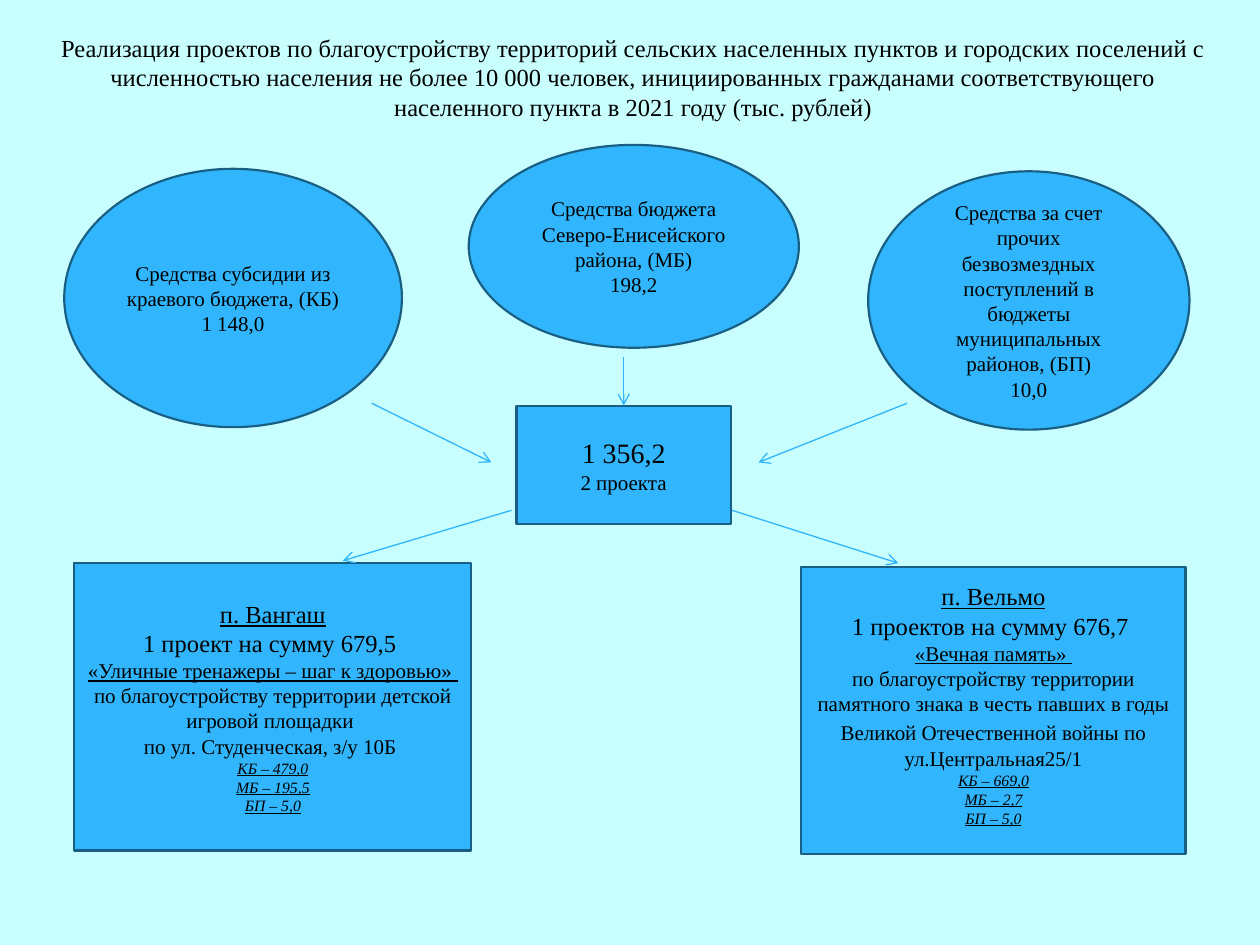
from dataclasses import dataclass
from typing import NamedTuple

from lxml import etree
from pptx import Presentation, util as u
from pptx.dml.color import RGBColor
from pptx.enum import shapes, text
from pptx.oxml import ns

COLORS = {"background": "C8FEFD", "fill": "31B6FD", "outline": "195F84", "text": "000000"}
FONT = "Times New Roman"
COLUMNS, ROWS = 100, 75
OVAL, RECTANGLE = shapes.MSO_SHAPE.OVAL, shapes.MSO_SHAPE.RECTANGLE

presentation = Presentation()
presentation.slide_width, presentation.slide_height = u.Inches(10), u.Inches(7.5)


class Run(NamedTuple):
    text: str
    size: float = 12
    underline: bool = False
    italic: bool = False


Lines = list[list[Run]]


@dataclass
class Node:
    """A filled shape placed in grid columns and rows."""
    kind: int
    left: float
    top: float
    width: float
    height: float
    lines: Lines
    bottom_inset: float = 0.05


class Arrow(NamedTuple):
    start: tuple[float, float]
    end: tuple[float, float]


def column(count: float) -> int:
    return round(presentation.slide_width * count / COLUMNS)


def row(count: float) -> int:
    return round(presentation.slide_height * count / ROWS)


def color(name: str) -> RGBColor:
    return RGBColor.from_string(COLORS[name])


def write_lines(frame, lines: Lines) -> None:
    frame.word_wrap = True
    frame.auto_size = text.MSO_AUTO_SIZE.NONE
    frame.vertical_anchor = text.MSO_ANCHOR.MIDDLE
    for index, line in enumerate(lines):
        paragraph = frame.add_paragraph() if index else frame.paragraphs[0]
        paragraph.alignment = text.PP_ALIGN.CENTER
        for item in line:
            run = paragraph.add_run()
            run.text = item.text
            run.font.name, run.font.size = FONT, u.Pt(item.size)
            run.font.underline, run.font.italic = item.underline, item.italic
            run.font.color.rgb = color("text")


def draw_node(slide, node: Node):
    shape = slide.shapes.add_shape(node.kind, column(node.left), row(node.top),
                                   column(node.width), row(node.height))
    shape.shadow.inherit = False
    shape.fill.solid()
    shape.fill.fore_color.rgb = color("fill")
    shape.line.color.rgb = color("outline")
    shape.line.width = u.Pt(1.25)
    shape.text_frame.margin_bottom = u.Inches(node.bottom_inset)
    write_lines(shape.text_frame, node.lines)
    return shape


def draw_arrow(slide, arrow: Arrow):
    (x1, y1), (x2, y2) = arrow
    connector = slide.shapes.add_connector(shapes.MSO_CONNECTOR.STRAIGHT,
                                           column(x1), row(y1), column(x2), row(y2))
    connector.line.color.rgb = color("fill")
    connector.line.width = u.Pt(0.75)
    etree.SubElement(connector.line._get_or_add_ln(), ns.qn("a:tailEnd"), type="arrow")
    etree.SubElement(connector._element.spPr, ns.qn("a:effectLst"))
    return connector


def source_lines(name: str, amount: str) -> Lines:
    return [[Run(name)], [Run(amount)]]


def project_lines(place: str, total: str, project: str, details: Lines,
                  shares: dict[str, str]) -> Lines:
    heading = [[Run(place, 14, True)], [Run(total, 14)], [Run(project, 12, True)]]
    budget = [[Run(f"{name} – {amount}", 9, True, True)] for name, amount in shares.items()]
    return heading + details + budget


TITLE = ("Реализация проектов по благоустройству территорий сельских населенных пунктов "
         "и городских поселений с численностью населения не более 10 000 человек, "
         "инициированных гражданами соответствующего населенного пункта "
         "в 2021 году (тыс. рублей)")

# Funding sources
SOURCES = [
    Node(OVAL, 5.1, 13.4, 26.8, 20.5,
         source_lines("Средства субсидии из краевого бюджета, (КБ)", "1 148,0")),
    Node(OVAL, 68.9, 13.6, 25.5, 20.5,
         source_lines("Средства за счет прочих безвозмездных поступлений в бюджеты "
                      "муниципальных районов, (БП)", "10,0")),
    Node(OVAL, 37.2, 11.5, 26.2, 16.1,
         source_lines("Средства бюджета Северо-Енисейского района, (МБ)", "198,2")),
]

# Total of all projects
TOTAL = Node(RECTANGLE, 41, 32.2, 17, 9.4, [[Run("1 356,2", 16)], [Run("2 проекта")]])

# Projects by settlement
PROJECTS = [
    Node(RECTANGLE, 5.9, 44.7, 31.5, 22.8, project_lines(
        "п. Вангаш", "1 проект на сумму 679,5 ", "«Уличные тренажеры – шаг к здоровью» ",
        [[Run("по благоустройству территории детской игровой площадки ")],
         [Run("по ул. Студенческая, з/у 10Б ")]],
        {"КБ": "479,0", "МБ": "195,5", "БП": "5,0"})),
    Node(RECTANGLE, 63.6, 45, 30.5, 22.8, project_lines(
        "п. Вельмо", "1 проектов на сумму 676,7 ", "«Вечная память» ",
        [[Run("по благоустройству территории памятного знака в честь павших в годы "
              "Великой Отечественной войны по"), Run(" ", 14), Run("ул.Центральная25/1")]],
        {"КБ": "669,0", "МБ": "2,7", "БП": "5,0"}), bottom_inset=0.15),
]

# Arrows that stop near the shapes
ARROWS = [
    Arrow((29.5, 32), (39, 36.7)),
    Arrow((72, 32), (60.2, 36.7)),
    Arrow((40.6, 40.5), (27.2, 44.5)),
    Arrow((58.1, 40.5), (71.3, 44.7)),
]


def main() -> None:
    slide = presentation.slides.add_slide(presentation.slide_layouts[5])
    slide.background.fill.solid()
    slide.background.fill.fore_color.rgb = color("background")

    # Title
    title = slide.shapes.title
    title.left, title.top = column(3.7), row(0.2)
    title.width, title.height = column(93.1), row(11.8)
    write_lines(title.text_frame, [[Run(TITLE, 14)]])

    # Shapes
    for node in SOURCES:
        draw_node(slide, node)
    total = draw_node(slide, TOTAL)
    for node in PROJECTS:
        draw_node(slide, node)

    # Arrows; the middle one is joined to the top of the total
    for arrow in ARROWS:
        draw_arrow(slide, arrow)
    middle = TOTAL.left + TOTAL.width / 2
    draw_arrow(slide, Arrow((middle, 28.3), (middle, TOTAL.top))).end_connect(total, 0)

    presentation.save("out.pptx")


if __name__ == "__main__":
    main()
